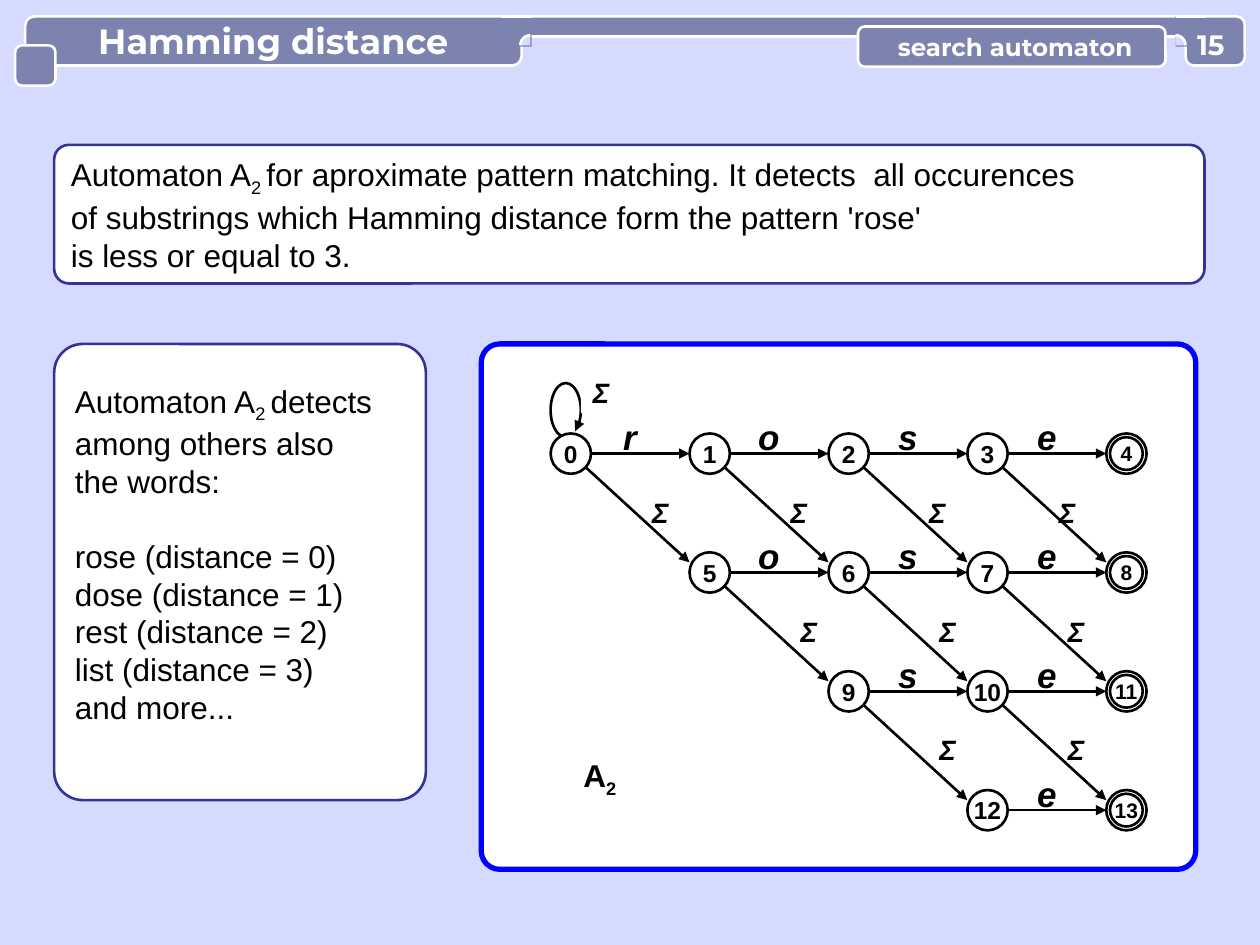
import pptx
import pptx.util
import pptx.dml.color
import pptx.enum.shapes
import pptx.enum.text
import pptx.oxml.ns
from lxml import etree

Inches = pptx.util.Inches
Pt = pptx.util.Pt
KIND = pptx.enum.shapes.MSO_SHAPE
ALIGN = pptx.enum.text.PP_ALIGN
ANCHOR = pptx.enum.text.MSO_ANCHOR
qn = pptx.oxml.ns.qn
COLORS = {
    "background": "D5DAFF", "header": "7D83AF", "white": "FFFFFF",
    "black": "000000", "frame": "333399", "diagram": "0000FF",
}
RGB = {name: pptx.dml.color.RGBColor.from_string(value) for name, value in COLORS.items()}

presentation = pptx.Presentation()
presentation.slide_width = Inches(10)
presentation.slide_height = Inches(7.5)
slide = presentation.slides.add_slide(presentation.slide_layouts[6])
slide.background.fill.solid()
slide.background.fill.fore_color.rgb = RGB["background"]


def add_shape(kind, box, fill=None, line=None, width=1.5, adjust=(), text="", size=18,
              font="Arial", color="black", bold=True, italic=False, align=ALIGN.CENTER,
              anchor=ANCHOR.MIDDLE, wrap=False, inset=None):
    """Add a shape, or a text box if kind is None; text between bars is subscript."""
    lengths = [Inches(value) for value in box]
    if kind is None:
        shape = slide.shapes.add_textbox(*lengths)
    else:
        shape = slide.shapes.add_shape(kind, *lengths)
        shape.shadow.inherit = False
        for index, value in enumerate(adjust):
            shape.adjustments[index] = value
        if fill:
            shape.fill.solid()
            shape.fill.fore_color.rgb = RGB[fill]
        else:
            shape.fill.background()
        if line:
            shape.line.color.rgb = RGB[line]
            shape.line.width = Pt(width)
        else:
            shape.line.fill.background()
    if not text:
        return shape
    frame = shape.text_frame
    frame.word_wrap = wrap
    frame.vertical_anchor = anchor
    if inset is not None:
        frame.margin_left = frame.margin_right = frame.margin_bottom = 0
        frame.margin_top = Inches(inset)
    for number, content in enumerate(text.split("\n")):
        paragraph = frame.add_paragraph() if number else frame.paragraphs[0]
        paragraph.alignment = align
        paragraph.font.name = font
        paragraph.font.size = Pt(size)
        paragraph.font.bold = bold
        paragraph.font.italic = italic
        paragraph.font.color.rgb = RGB[color]
        for index, part in enumerate(content.split("|")):
            if part:
                run = paragraph.add_run()
                run.text = part
                if index % 2:
                    run.font._element.set("baseline", "-25000")
    return shape


def add_line(start, end, color="black", arrow=True):
    connector = slide.shapes.add_connector(
        pptx.enum.shapes.MSO_CONNECTOR.STRAIGHT, *[Inches(value) for value in start + end])
    connector.line.color.rgb = RGB[color]
    connector.line.width = Pt(1.5)
    if arrow:
        etree.SubElement(connector.line._get_or_add_ln(), qn("a:tailEnd"), type="triangle")
    etree.SubElement(connector._element.spPr, qn("a:effectLst"))


# Text panels and diagram frame
panel = dict(fill="white", line="frame", bold=False, align=ALIGN.LEFT, wrap=True)
add_shape(KIND.ROUNDED_RECTANGLE, (0.43, 1.15, 9.13, 1.1), adjust=[0.106], **panel,
          text="Automaton A|2 |for aproximate pattern matching. It detects  all occurences\n"
               "of substrings which Hamming distance form the pattern 'rose'\n"
               "is less or equal to 3.")
add_shape(KIND.ROUNDED_RECTANGLE, (3.82, 2.73, 5.67, 4.17), "white", "diagram", 3, [0.035])
words = add_shape(KIND.ROUNDED_RECTANGLE, (0.43, 2.73, 2.95, 3.62), adjust=[0.077], **panel,
                  text="Automaton A|2 |detects\namong others also\nthe words:\n"
                       "rose (distance = 0)\ndose (distance = 1)\nrest (distance = 2)\n"
                       "list (distance = 3)\nand more...")
words.text_frame.paragraphs[3].space_before = Pt(21)
words.text_frame.margin_bottom = Inches(0.34)
add_shape(None, (4.52, 5.95, 0.48, 0.4), text="A|2", anchor=ANCHOR.TOP)

# Header bar with tabs, each joined to the bar by a rounded fillet
tab = dict(fill="header", line="white", font="Montserrat", color="white")
add_shape(KIND.ROUNDED_RECTANGLE, (0.2, 0.13, 3.94, 0.39), adjust=[0.188],
          text="Hamming distance", size=20, **tab)
add_shape(KIND.ROUNDED_RECTANGLE, (4.06, 0.13, 5.43, 0.16), adjust=[0.5], **tab)
add_shape(KIND.ROUNDED_RECTANGLE, (0.12, 0.36, 0.32, 0.32), adjust=[0.17], **tab)
add_shape(KIND.ROUNDED_RECTANGLE, (9.41, 0.13, 0.47, 0.39), adjust=[0.17], **tab)
for joint_left, arc_left, angles in ((3.98, 4.13, (108, 162)), (9.33, 9.25, (162, 0))):
    add_shape(KIND.RECTANGLE, (joint_left, 0.13, 0.24, 0.24), "header")
    add_line((joint_left, 0.13), (joint_left + 0.24, 0.13), "white", arrow=False)
    add_shape(KIND.ARC, (arc_left, 0.28, 0.16, 0.16), "background", "white", adjust=angles)
add_shape(KIND.ROUNDED_RECTANGLE, (6.81, 0.21, 2.44, 0.32), adjust=[0.17],
          text=" search automaton", size=14, **tab)
add_shape(None, (9.41, 0.22, 0.4, 0.27), text="15", size=16, font="Montserrat",
          color="white", wrap=True, inset=0)

# Automaton grid: row r starts in column r, the last column holds final states
LEFT, TOP, COLUMN, ROW, NODE = 4.37, 3.44, 1.1, 0.94, 0.32
COLUMN, ROW = 4.41 / 4, 2.83 / 3
RADIUS = NODE / 2
STATES = [[0, 1, 2, 3, 4], [5, 6, 7, 8], [9, 10, 11], [12, 13]]
label = dict(fill="white", italic=True, anchor=ANCHOR.TOP, wrap=True, inset=0.02)

# Labels of the diagonal transitions
for row, lefts in enumerate([(5.08, 6.18, 7.28, 8.31), (6.26, 7.36, 8.38), (7.36, 8.38)]):
    for left in lefts:
        add_shape(KIND.RECTANGLE, (left, 3.91 + row * ROW, NODE, NODE),
                  text="Σ", size=16, **label)

# Loop on the start state
loop = add_shape(KIND.ARC, (4.37, 3.04, 0.24, 0.43), line="black", adjust=(54, 39.6))
etree.SubElement(loop.line._get_or_add_ln(), qn("a:tailEnd"), type="triangle")
add_shape(KIND.RECTANGLE, (4.61, 2.96, NODE, NODE), text="Σ", size=16, **label)

# Diagonal transitions
for row in range(3):
    for column in range(row, 4):
        x = LEFT + RADIUS + column * COLUMN
        y = TOP + RADIUS + row * ROW
        add_line((x, y), (x + COLUMN - RADIUS, y + ROW - RADIUS / 2))

# States and transitions on pattern letters
for row, states in enumerate(STATES):
    y = TOP + row * ROW
    for column, state in enumerate(states, start=row):
        x = LEFT + column * COLUMN
        final = column == 4
        if not final:
            add_shape(KIND.RECTANGLE, (x + 0.47, y - RADIUS, NODE, NODE),
                      text="rose"[column], size=20, **label)
            add_line((x + NODE, y + RADIUS), (x + COLUMN, y + RADIUS))
        add_shape(KIND.OVAL, (x, y, NODE, NODE), "white", "black",
                  text="" if final else str(state), size=14)
        if final:
            add_shape(KIND.OVAL, (x + 0.03, y + 0.03, NODE - 0.06, NODE - 0.06),
                      "white", "black", text=str(state), size=12)

presentation.save("out.pptx")
